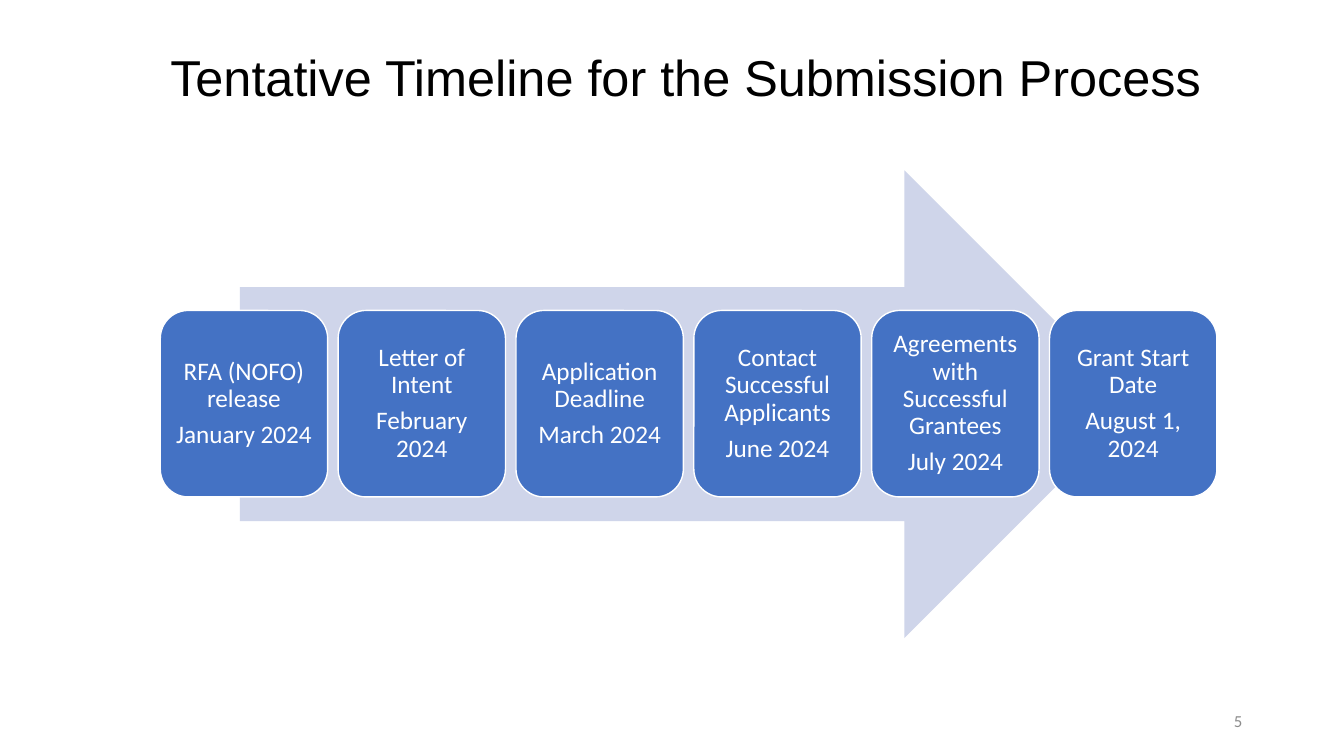
from dataclasses import dataclass

from pptx import Presentation
from pptx.dml.color import RGBColor
from pptx.enum.shapes import MSO_SHAPE
from pptx.enum.text import MSO_ANCHOR, PP_ALIGN
from pptx.shapes.autoshape import Shape
from pptx.slide import Slide
from pptx.util import Inches, Pt

RIGHT_ARROW = MSO_SHAPE.RIGHT_ARROW
ROUNDED = MSO_SHAPE.ROUNDED_RECTANGLE
TOP, MIDDLE = MSO_ANCHOR.TOP, MSO_ANCHOR.MIDDLE
LEFT, CENTER, RIGHT = PP_ALIGN.LEFT, PP_ALIGN.CENTER, PP_ALIGN.RIGHT

BLACK, WHITE, GRAY = "000000", "FFFFFF", "8C8C8C"
BLUE, PALE_BLUE = "4472C4", "CFD5EA"

CARD_LEFT, CARD_TOP = 1.59, 3.08
CARD_WIDTH, CARD_HEIGHT = 1.66, 1.85
CARD_STEP = 1.764


@dataclass(frozen=True)
class Milestone:
    label: str
    date: str


MILESTONES = [
    Milestone("RFA (NOFO) release", "January 2024"),
    Milestone("Letter of Intent", "February 2024"),
    Milestone("Application Deadline", "March 2024"),
    Milestone("Contact Successful Applicants", "June 2024"),
    Milestone("Agreements with Successful Grantees", "July 2024"),
    Milestone("Grant Start Date", "August 1, 2024"),
]


def color(value: str) -> RGBColor:
    return RGBColor.from_string(value)


def write(box: Shape, *texts: str, size: float, ink: str, font: str = "Calibri",
          align: PP_ALIGN = LEFT, anchor: MSO_ANCHOR = MIDDLE,
          line_spacing: float = 1.0, space_after: float = 0) -> None:
    """Fill a shape with one paragraph per text."""
    frame = box.text_frame
    frame.word_wrap = True
    frame.vertical_anchor = anchor
    for index, text in enumerate(texts):
        para = frame.add_paragraph() if index else frame.paragraphs[0]
        para.alignment = align
        para.line_spacing = line_spacing
        para.space_after = Pt(space_after)
        span = para.add_run()
        span.text = text
        span.font.name = font
        span.font.size = Pt(size)
        span.font.color.rgb = color(ink)


def add_text(page: Slide, left: float, top: float, width: float,
             height: float) -> Shape:
    return page.shapes.add_textbox(
        Inches(left), Inches(top), Inches(width), Inches(height))


def add_block(page: Slide, kind: MSO_SHAPE, left: float, top: float, width: float,
              height: float, fill: str, outline: str = "") -> Shape:
    block = page.shapes.add_shape(
        kind, Inches(left), Inches(top), Inches(width), Inches(height))
    block.shadow.inherit = False
    block.fill.solid()
    block.fill.fore_color.rgb = color(fill)
    if outline:
        block.line.color.rgb = color(outline)
        block.line.width = Pt(1)
    else:
        block.line.fill.background()
    return block


def add_card(page: Slide, milestone: Milestone, left: float) -> None:
    card = add_block(page, ROUNDED, left, CARD_TOP, CARD_WIDTH, CARD_HEIGHT,
                     BLUE, outline=WHITE)
    frame = card.text_frame
    frame.margin_left = frame.margin_right = Inches(0.07)
    frame.margin_top = frame.margin_bottom = Inches(0.07)
    write(card, milestone.label, milestone.date, size=18, ink=WHITE,
          align=CENTER, line_spacing=0.9, space_after=6.3)


def main() -> None:
    deck = Presentation()
    deck.slide_width, deck.slide_height = Inches(13.33), Inches(7.5)
    page = deck.slides.add_slide(deck.slide_layouts[6])

    title = add_text(page, 1.59, 0.48, 11.12, 0.85)
    write(title, "Tentative Timeline for the Submission Process", size=36,
          ink=BLACK, font="Arial", anchor=TOP, line_spacing=0.9)
    page_number = add_text(page, 9.42, 6.95, 3, 0.4)
    write(page_number, "5", size=12, ink=GRAY, align=RIGHT)

    add_block(page, RIGHT_ARROW, 2.38, 1.69, 8.91, 4.64, PALE_BLUE)
    for index, milestone in enumerate(MILESTONES):
        add_card(page, milestone, CARD_LEFT + index * CARD_STEP)

    deck.save("out.pptx")


if __name__ == "__main__":
    main()
